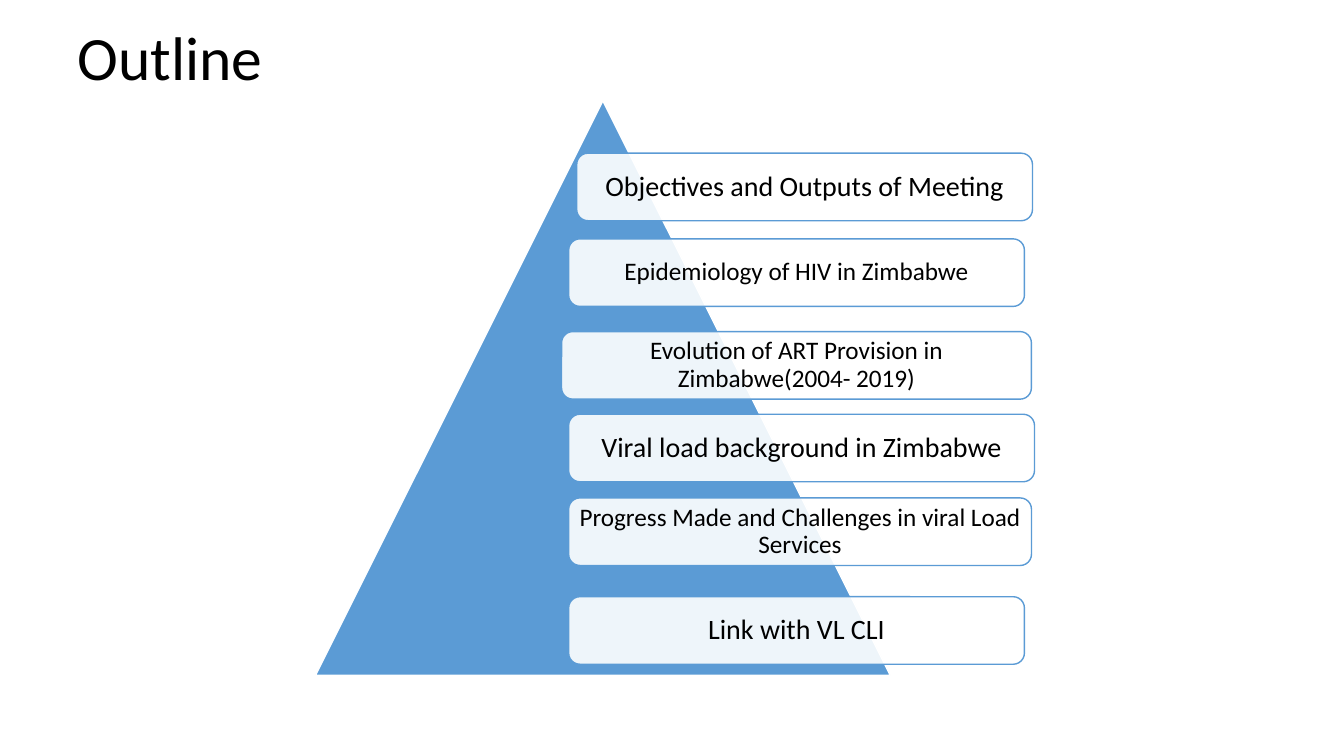
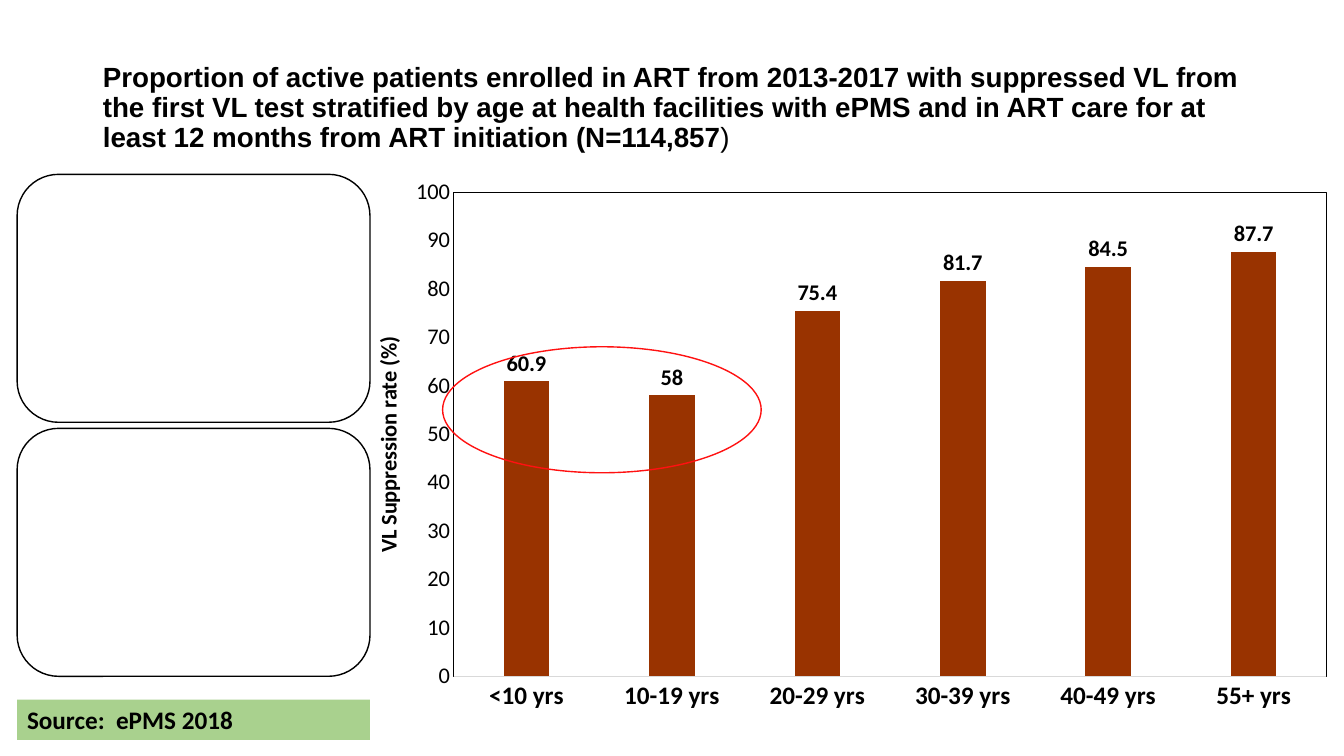
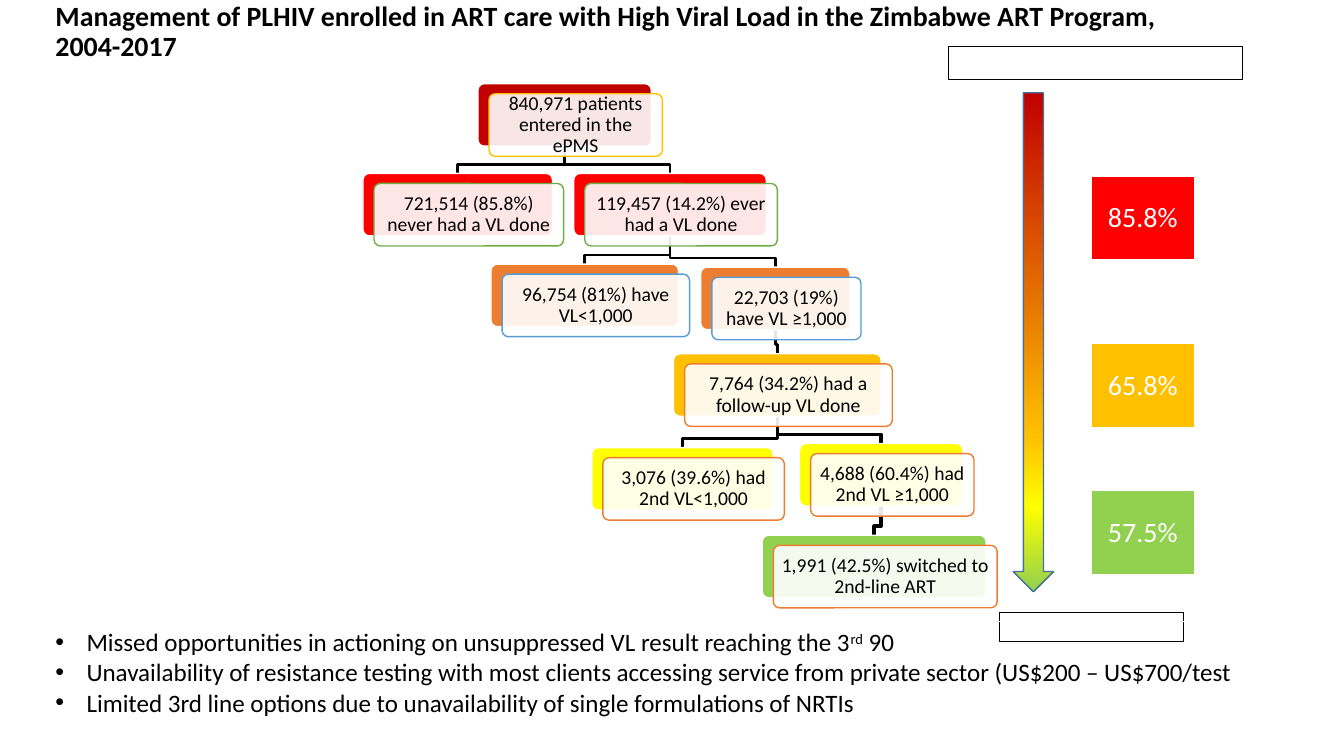
from lxml import etree
from pptx import Presentation
from pptx.chart.data import CategoryChartData
from pptx.dml.color import RGBColor
from pptx.enum.chart import XL_CHART_TYPE, XL_LABEL_POSITION, XL_TICK_MARK
from pptx.enum.shapes import MSO_SHAPE
from pptx.enum.text import MSO_ANCHOR, MSO_AUTO_SIZE, PP_ALIGN
from pptx.oxml.ns import qn
from pptx.util import Inches, Pt

RECTANGLE = MSO_SHAPE.RECTANGLE
ROUNDED = MSO_SHAPE.ROUNDED_RECTANGLE
TRIANGLE = MSO_SHAPE.ISOSCELES_TRIANGLE
ELLIPSE = MSO_SHAPE.OVAL
DOWN_ARROW = MSO_SHAPE.DOWN_ARROW
TOP, MIDDLE = MSO_ANCHOR.TOP, MSO_ANCHOR.MIDDLE
LEFT, CENTER = PP_ALIGN.LEFT, PP_ALIGN.CENTER
COLUMNS = XL_CHART_TYPE.COLUMN_CLUSTERED
OUTSIDE_END = XL_LABEL_POSITION.OUTSIDE_END
NO_TICK = XL_TICK_MARK.NONE
NO_AUTOFIT = MSO_AUTO_SIZE.NONE

BLACK = RGBColor(0x00, 0x00, 0x00)
WHITE = RGBColor(0xFF, 0xFF, 0xFF)
BLUE = RGBColor(0x5B, 0x9B, 0xD5)
DARK_BLUE = RGBColor(0x43, 0x73, 0x9E)
DARK_RED = RGBColor(0xC0, 0x00, 0x00)
RED = RGBColor(0xFF, 0x00, 0x00)
MARKER_RED = RGBColor(0xFF, 0x11, 0x11)
ORANGE = RGBColor(0xED, 0x7D, 0x31)
AMBER = RGBColor(0xFF, 0xC0, 0x00)
YELLOW = RGBColor(0xFF, 0xFF, 0x00)
LIME = RGBColor(0x92, 0xD0, 0x50)
GREEN = RGBColor(0x70, 0xAD, 0x47)
PALE_GREEN = RGBColor(0xA9, 0xD1, 0x8E)
BROWN = RGBColor(0x99, 0x33, 0x00)
GREY = RGBColor(0xD9, 0xD9, 0xD9)

BODY_FONT = "Calibri"
TITLE_ONLY = 5

OUTLINE = [
    (5.72, 1.52, 4.52, 20, "Objectives and Outputs of Meeting"),
    (5.64, 2.37, 4.52, 18, "Epidemiology of HIV in Zimbabwe"),
    (5.57, 3.29, 4.66, 18, "Evolution of ART Provision in Zimbabwe(2004- 2019)"),
    (5.64, 4.11, 4.62, 20, "Viral load background in Zimbabwe"),
    (5.64, 4.94, 4.59, 18, "Progress Made and Challenges in viral Load Services"),
    (5.64, 5.92, 4.52, 20, "Link with VL CLI"),
]

SUPPRESSION = {
    "<10 yrs": 60.9, "10-19 yrs": 58, "20-29 yrs": 75.4,
    "30-39 yrs": 81.7, "40-49 yrs": 84.5, "55+ yrs": 87.7,
}

CASCADE = {
    "entered": (4.74, 0.83, 1.72, DARK_RED, AMBER, "840,971 patients entered in the ePMS"),
    "never tested": (3.6, 1.72, 1.88, RED, GREEN, "721,514 (85.8%) never had a VL done"),
    "tested": (5.69, 1.72, 1.91, RED, GREEN, "119,457 (14.2%) ever had a VL done"),
    "low": (4.87, 2.62, 1.86, ORANGE, BLUE, "96,754 (81%) have VL<1,000"),
    "high": (6.95, 2.65, 1.48, ORANGE, BLUE, "22,703 (19%) have VL ≥1,000"),
    "followed": (6.68, 3.51, 2.06, AMBER, ORANGE, "7,764 (34.2%) had a follow-up VL done"),
    "second low": (5.87, 4.44, 1.8, YELLOW, ORANGE, "3,076 (39.6%) had 2nd VL<1,000"),
    "second high": (7.93, 4.4, 1.62, YELLOW, ORANGE, "4,688 (60.4%) had 2nd VL ≥1,000"),
    "switched": (7.56, 5.31, 2.22, LIME, ORANGE, "1,991 (42.5%) switched to 2nd-line ART"),
}
LINKS = [
    ("entered", "never tested", 2), ("entered", "tested", 2),
    ("tested", "low", 2), ("tested", "high", 2),
    ("high", "followed", 2.5), ("followed", "second low", 2),
    ("followed", "second high", 2.5), ("second high", "switched", 2.5),
]
CARD_HEIGHT = 0.62
BEND_GAP = 0.09

GAPS = [
    (0.83, None, ""), (0.83, RED, "85.8%"), (0.83, None, ""),
    (0.83, AMBER, "65.8%"), (0.63, None, ""), (0.83, LIME, "57.5%"),
]
ARROW_STOPS = [(0, DARK_RED), (69, AMBER), (83, YELLOW), (100, LIME)]

ACTIONS = [
    "Missed opportunities in actioning on unsuppressed VL result reaching the 3",
    "Unavailability of resistance testing with most clients accessing service "
    "from private sector (US$200 – US$700/test",
    "Limited 3rd line options due to unavailability of single formulations of NRTIs",
]


def format_font(font, size, color=BLACK, bold=False, name=BODY_FONT):
    font.name = name
    font.size = Pt(size)
    font.bold = bold
    font.color.rgb = color


def format_text(text_frame, size, align=LEFT, spacing=None, color=BLACK, bold=False, name=BODY_FONT):
    for paragraph in text_frame.paragraphs:
        paragraph.alignment = align
        paragraph.line_spacing = spacing
        for run in paragraph.runs:
            format_font(run.font, size, color, bold, name)


def set_insets(text_frame, inset):
    text_frame.margin_left = text_frame.margin_right = Inches(inset)
    text_frame.margin_top = text_frame.margin_bottom = Inches(inset)


def add_titled_slide(presentation, text, box, size, bold=False, name=BODY_FONT):
    slide = presentation.slides.add_slide(presentation.slide_layouts[TITLE_ONLY])
    title = slide.shapes.title
    title.left, title.top, title.width, title.height = map(Inches, box)
    text_frame = title.text_frame
    text_frame.text = text
    text_frame.word_wrap = True
    text_frame.auto_size = NO_AUTOFIT
    text_frame.vertical_anchor = MIDDLE
    format_text(text_frame, size, spacing=0.9, bold=bold, name=name)
    return slide


def add_box(slide, kind, box, fill=None, line=None, width=1, opacity=100):
    shape = slide.shapes.add_shape(kind, *map(Inches, box))
    shape.shadow.inherit = False
    if fill is None:
        shape.fill.background()
    else:
        shape.fill.solid()
        shape.fill.fore_color.rgb = fill
        if opacity < 100:
            color = shape._element.spPr.find(".//" + qn("a:srgbClr"))
            etree.SubElement(color, qn("a:alpha")).set("val", str(opacity * 1000))
    if line is None:
        shape.line.fill.background()
    else:
        shape.line.color.rgb = line
        shape.line.width = Pt(width)
    return shape


def add_text_box(slide, kind, box, text, size, fill=None, line=None, inset=None,
                 opacity=100, bold=False, align=CENTER, anchor=MIDDLE, spacing=0.9, width=1):
    shape = add_box(slide, kind, box, fill, line, width, opacity)
    text_frame = shape.text_frame
    text_frame.text = text
    text_frame.word_wrap = True
    text_frame.vertical_anchor = anchor
    if inset is not None:
        set_insets(text_frame, inset)
    format_text(text_frame, size, align, spacing, bold=bold)
    return shape


def add_link(slide, parent, child, width):
    parent_left, parent_top, parent_width = CASCADE[parent][:3]
    child_left, child_top, child_width = CASCADE[child][:3]
    start_x = parent_left + parent_width / 2
    end_x = child_left + child_width / 2
    start_y = parent_top + CARD_HEIGHT
    bend_y = child_top - BEND_GAP
    points = [(start_x, bend_y), (end_x, bend_y), (end_x, child_top)]
    builder = slide.shapes.build_freeform(Inches(start_x), Inches(start_y))
    builder.add_line_segments([(Inches(x), Inches(y)) for x, y in points], close=False)
    link = builder.convert_to_shape()
    link.shadow.inherit = False
    link.fill.background()
    link.line.color.rgb = BLACK
    link.line.width = Pt(width)


def add_card(slide, left, top, width, fill, line, text):
    back = add_box(slide, ROUNDED, (left, top, width, CARD_HEIGHT), fill, WHITE)
    front = add_text_box(slide, ROUNDED, (left + 0.11, top + 0.1, width, CARD_HEIGHT), text, 14,
                         WHITE, line, inset=0.06, opacity=90)
    for shape in (back, front):
        shape.adjustments[0] = 0.1


def add_gap_table(slide):
    height = sum(row[0] for row in GAPS)
    frame = slide.shapes.add_table(len(GAPS), 1, Inches(10.82), Inches(0.92), Inches(1.03), Inches(height))
    table = frame.table
    table.first_row = False
    table.horz_banding = False
    for index, (row_height, fill, text) in enumerate(GAPS):
        table.rows[index].height = Inches(row_height)
        cell = table.cell(index, 0)
        if fill is None:
            cell.fill.background()
            continue
        cell.fill.solid()
        cell.fill.fore_color.rgb = fill
        cell.text = text
        cell.vertical_anchor = MIDDLE
        cell.margin_left = cell.margin_right = Inches(0.07)
        cell.margin_top = cell.margin_bottom = Inches(0.04)
        format_text(cell.text_frame, 20, CENTER, color=WHITE)


def apply_gradient(shape, stops):
    shape.fill.gradient()
    shape.fill.gradient_angle = 270
    stop_list = shape._element.spPr.find(".//" + qn("a:gsLst"))
    for stop in list(stop_list):
        stop_list.remove(stop)
    for position, color in stops:
        stop = etree.SubElement(stop_list, qn("a:gs"), pos=str(position * 1000))
        etree.SubElement(stop, qn("a:srgbClr"), val=str(color))


def add_bullets(text_frame):
    for paragraph in text_frame.paragraphs:
        properties = paragraph._p.get_or_add_pPr()
        properties.set("marL", str(Inches(0.31)))
        properties.set("indent", str(-Inches(0.31)))
        etree.SubElement(properties, qn("a:buFont"), typeface="Arial")
        etree.SubElement(properties, qn("a:buChar"), char="•")


def format_plot_area(chart, layout_box):
    plot_area = chart._chartSpace.chart.plotArea
    for old_layout in plot_area.findall(qn("c:layout")):
        plot_area.remove(old_layout)
    layout = etree.Element(qn("c:layout"))
    plot_area.insert(0, layout)
    manual = etree.SubElement(layout, qn("c:manualLayout"))
    settings = [("layoutTarget", "inner"), ("xMode", "edge"), ("yMode", "edge")]
    settings += zip("xywh", layout_box)
    for tag, value in settings:
        etree.SubElement(manual, qn("c:" + tag), val=str(value))
    properties = etree.SubElement(plot_area, qn("c:spPr"))
    etree.SubElement(properties, qn("a:noFill"))
    line = etree.SubElement(properties, qn("a:ln"), w=str(Pt(0.75)))
    fill = etree.SubElement(line, qn("a:solidFill"))
    etree.SubElement(fill, qn("a:srgbClr"), val=str(BLACK))


def add_suppression_chart(slide):
    data = CategoryChartData()
    data.categories = list(SUPPRESSION)
    data.add_series("Series 1", list(SUPPRESSION.values()))
    box = map(Inches, (3.66, 1.7, 9.66, 5.7))
    chart = slide.shapes.add_chart(COLUMNS, *box, data).chart
    chart.has_legend = False
    chart.has_title = False
    format_font(chart.font, 16)

    plot = chart.plots[0]
    plot.gap_width = 219
    plot.overlap = -27
    plot.vary_by_categories = False
    series = plot.series[0]
    series.format.fill.solid()
    series.format.fill.fore_color.rgb = BROWN
    labels = series.data_labels
    labels.show_value = True
    labels.position = OUTSIDE_END
    format_font(labels.font, 16, bold=True)

    category_axis, value_axis = chart.category_axis, chart.value_axis
    for axis in (category_axis, value_axis):
        axis.major_tick_mark = axis.minor_tick_mark = NO_TICK
        axis.has_major_gridlines = False
    format_font(category_axis.tick_labels.font, 18, bold=True)
    category_axis.format.line.color.rgb = GREY
    category_axis.format.line.width = Pt(0.75)
    value_axis.minimum_scale, value_axis.maximum_scale, value_axis.major_unit = 0, 100, 10
    value_axis.tick_labels.number_format = "#,##0"
    value_axis.tick_labels.number_format_is_linked = False
    format_font(value_axis.tick_labels.font, 16)
    value_axis.format.line.fill.background()
    axis_title = value_axis.axis_title.text_frame
    axis_title.text = "VL Suppression rate (%)"
    format_font(axis_title.paragraphs[0].runs[0].font, 16, bold=True)
    format_plot_area(chart, (0.087, 0.036, 0.896, 0.843))


def build_outline(presentation):
    slide = add_titled_slide(presentation, "Outline", (0.67, 0.13, 12, 0.94), 44)
    add_box(slide, TRIANGLE, (3.13, 1, 5.7, 5.7), BLUE, WHITE)
    for left, top, width, size, text in OUTLINE:
        add_text_box(slide, ROUNDED, (left, top, width, 0.67), text, size,
                     WHITE, BLUE, inset=0.07, opacity=90)


def build_suppression(presentation):
    heading = ("Proportion of active patients enrolled in ART from 2013-2017 with suppressed VL "
               "from the first VL test stratified by age at health facilities with ePMS and in "
               "ART care for at least 12 months from ART initiation (N=114,857")
    slide = add_titled_slide(presentation, heading, (0.92, 0.4, 11.5, 1.45), 19.8, True, "Arial")
    title_frame = slide.shapes.title.text_frame
    title_frame.margin_bottom = Inches(0.14)
    bracket = title_frame.paragraphs[0].add_run()
    bracket.text = ")"
    format_font(bracket.font, 19.8, name="Arial")

    add_suppression_chart(slide)
    for top in (1.73, 4.25):
        add_box(slide, ROUNDED, (0.17, top, 3.5, 2.46), WHITE, BLACK)
    add_text_box(slide, RECTANGLE, (0.17, 6.94, 3.5, 0.4), "Source:  ePMS 2018", 18,
                 PALE_GREEN, bold=True, align=LEFT, anchor=TOP, spacing=None)
    add_box(slide, ELLIPSE, (4.39, 3.44, 3.16, 1.25), line=MARKER_RED)


def build_cascade(presentation):
    heading = ("Management of PLHIV enrolled in ART care with High Viral Load "
               "in the Zimbabwe ART Program, 2004-2017")
    slide = add_titled_slide(presentation, heading, (0.45, 0.15, 11.4, 0.34), 19.9, True)
    for parent, child, width in LINKS:
        add_link(slide, parent, child, width)
    for card in CASCADE.values():
        add_card(slide, *card)
    add_gap_table(slide)
    arrow = add_box(slide, DOWN_ARROW, (10.05, 0.92, 0.4, 4.95), line=DARK_BLUE)
    apply_gradient(arrow, ARROW_STOPS)
    for box in ((9.41, 0.46, 2.91, 0.33), (9.91, 6.08, 1.83, 0.28)):
        add_box(slide, RECTANGLE, box, line=BLACK, width=0.75)

    actions = add_text_box(slide, RECTANGLE, (0.45, 6.17, 12.61, 1.01), "\n".join(ACTIONS), 17.9,
                           line=WHITE, align=LEFT, anchor=TOP, spacing=None, width=0.75)
    add_bullets(actions.text_frame)
    for text, baseline in (("rd", 30000), (" 90", 0)):
        run = actions.text_frame.paragraphs[0].add_run()
        run.text = text
        format_font(run.font, 17.9)
        run.font._element.set("baseline", str(baseline))


def main():
    presentation = Presentation()
    presentation.slide_width = Inches(13.33)
    presentation.slide_height = Inches(7.5)
    build_outline(presentation)
    build_suppression(presentation)
    build_cascade(presentation)
    presentation.save("out.pptx")


if __name__ == "__main__":
    main()
